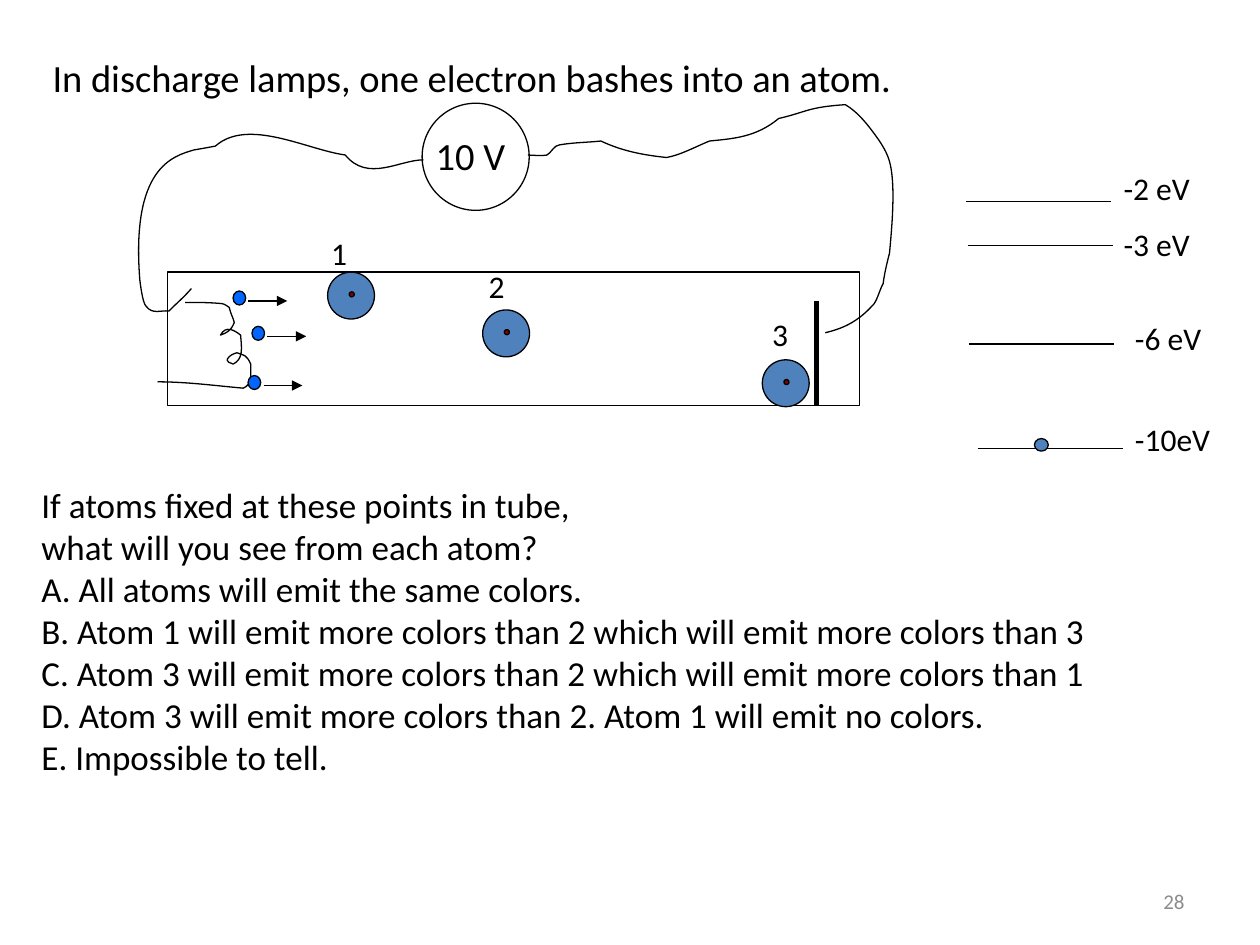
from lxml.etree import SubElement
from pptx import Presentation
from pptx.dml.color import RGBColor
from pptx.enum.shapes import MSO_CONNECTOR, MSO_SHAPE
from pptx.enum.text import MSO_ANCHOR, MSO_AUTO_SIZE, PP_ALIGN
from pptx.oxml.ns import qn
from pptx.util import Pt

HUE = {"ink": "000000", "atom": "4F81BD", "core": "800000",
       "free": "0066FF", "page": "8C8C8C"}
FONT = "Calibri"

QUIZ = [
    "If atoms fixed at these points in tube,",
    "what will you see from each atom?",
    "A. All atoms will emit the same colors.",
    "B. Atom 1 will emit more colors than 2 which will emit more colors than 3",
    "C. Atom 3 will emit more colors than 2 which will emit more colors than 1",
    "D. Atom 3 will emit more colors than 2. Atom 1 will emit no colors.",
    "E. Impossible to tell.",
]

# Each curve: a start point, then two handles and an end point per segment.
COIL = [
    (105.8, 172.8),
    (113, 172.8), (119.5, 172.8), (126.7, 173.5),
    (128.2, 173.5), (131, 175.7), (131, 175.7),
    (131.8, 179.3), (133.2, 181.4), (133.9, 184.3),
    (131.8, 189.4), (129.6, 190.1), (126, 191.5),
    (128.9, 185.8), (133.9, 188.6), (137.5, 191.5),
    (138.2, 199.4), (139, 205.2), (133.2, 208.1),
    (133.2, 207.4), (127.4, 207.4), (131, 203.8),
    (132.5, 202.3), (135.4, 201.6), (135.4, 201.6),
    (139.7, 203), (141.1, 203), (143.3, 208.1),
    (143.3, 215.3), (144, 219.6), (139, 221.8),
    (122.4, 220.3), (106.6, 218.2), (90, 218.2),
]
LEFT_WIRE = [
    (109.4, 164.9),
    (105.1, 169.9), (100.8, 173.5), (96.5, 177.8),
    (92.2, 177.1), (87.1, 180), (83.5, 175),
    (81.4, 173.5), (79.9, 159.8), (79.9, 159.8),
    (74.9, 95.8), (98.6, 89.3), (110.9, 85.7),
    (115.2, 85), (119.5, 84.2), (123.1, 83.5),
    (141.8, 67), (175.7, 85.7), (197.3, 88.6),
    (210.2, 104.4), (228.2, 91.4), (241.9, 91.4),
]
RIGHT_WIRE = [
    (471.6, 190.1),
    (481, 187.9), (489.6, 184.3), (498.2, 175),
    (501.1, 172.8), (502.6, 165.6), (504.7, 162),
    (505.4, 155.5), (508.3, 144.7), (508.3, 144.7),
    (509.8, 128.9), (511.9, 105.1), (508.3, 92.2),
    (506.9, 87.1), (504, 82.8), (502.6, 80.6),
    (496.1, 71.3), (490.3, 64.1), (483.1, 59.8),
    (461.5, 61.2), (460.8, 64.1), (445, 67.7),
    (432, 78.5), (419, 79.2), (405.4, 80.6),
    (396.7, 84.2), (388.8, 88.6), (380.9, 90),
    (367.9, 88.6), (355.7, 86.4), (343.4, 80.6),
    (335.5, 81.4), (327.6, 81.4), (319.7, 82.8),
    (316.8, 82.8), (314.6, 87.8), (312.5, 88.6),
    (308.9, 89.3), (305.3, 88.6), (301.7, 88.6),
]


def tint(name):
    return RGBColor.from_string(HUE[name])


def style(shape, fill=None):
    """Thin black outline, no shadow, and a fill only if one is named."""
    shape.shadow.inherit = False
    shape.line.color.rgb = tint("ink")
    shape.line.width = Pt(0.75)
    if fill:
        shape.fill.solid()
        shape.fill.fore_color.rgb = tint(fill)
    else:
        shape.fill.background()


def add_form(shapes, kind, x, y, w, h, fill=None):
    style(shapes.add_shape(kind, Pt(x), Pt(y), Pt(w), Pt(h)), fill)


def add_curve(shapes, points):
    """Draw the points as a chain of cubic Bezier segments."""
    first, *rest = [(Pt(x), Pt(y)) for x, y in points]
    pen = shapes.build_freeform(*first)
    pen.add_line_segments(rest, close=False)
    shape = pen.convert_to_shape()
    style(shape)
    steps = list(shape.element.iter(qn("a:lnTo")))
    for i in range(0, len(steps), 3):
        bend = SubElement(steps[i].getparent(), qn("a:cubicBezTo"))
        for step in steps[i:i + 3]:
            bend.append(step[0])
            step.getparent().remove(step)


def add_line(shapes, x1, y1, x2, y2, width=0.75, arrow=False):
    line = shapes.add_connector(
        MSO_CONNECTOR.STRAIGHT, Pt(x1), Pt(y1), Pt(x2), Pt(y2))
    line.line.color.rgb = tint("ink")
    line.line.width = Pt(width)
    if arrow:
        SubElement(line.line._get_or_add_ln(), qn("a:tailEnd"), type="triangle")
    SubElement(line.element.spPr, qn("a:effectLst"))


def add_text(shapes, lines, x, y, w, h, size, color="ink", wrap=False):
    frame = shapes.add_textbox(Pt(x), Pt(y), Pt(w), Pt(h)).text_frame
    frame.word_wrap = wrap
    frame.auto_size = MSO_AUTO_SIZE.SHAPE_TO_FIT_TEXT
    frame.text = "\n".join(lines)
    for para in frame.paragraphs:
        for run in para.runs:
            run.font.name = FONT
            run.font.size = Pt(size)
            run.font.color.rgb = tint(color)
    return frame


def add_atom(shapes, x, y):
    group = shapes.add_group_shape().shapes
    add_form(group, MSO_SHAPE.OVAL, x, y, 26.8, 26.8, "atom")
    add_form(group, MSO_SHAPE.OVAL, x + 12.4, y + 11.3, 2.9, 2.9, "core")


def add_free(shapes, x, y):
    """A free electron with its arrow of motion."""
    add_form(shapes, MSO_SHAPE.OVAL, x, y, 7.2, 8, "free")
    add_line(shapes, x + 8.8, y + 5.7, x + 31, y + 5.7, arrow=True)


def add_tube(shapes):
    for curve in (COIL, LEFT_WIRE, RIGHT_WIRE):
        add_curve(shapes, curve)
    add_line(shapes, 466.6, 172, 466.6, 231.8, width=3)
    add_form(shapes, MSO_SHAPE.OVAL, 241.2, 59, 61.2, 61.2)
    add_text(shapes, ["10 V"], 241.9, 72, 59.8, 33.8, 22)
    add_form(shapes, MSO_SHAPE.RECTANGLE, 95.8, 155.5, 395.3, 76.3)
    for x, y in ((133.2, 166.3), (144, 186.5), (141.8, 214.6)):
        add_free(shapes, x, y)
    atoms = [("1", 187.2, 155.5, 182.2, 130.3),
             ("2", 275.8, 177.1, 272.2, 149),
             ("3", 435.6, 205.6, 434.2, 176.4)]
    for name, x, y, tx, ty in atoms:
        add_atom(shapes, x, y)
        add_text(shapes, [name], tx, ty, 28, 36, 18)


def add_levels(shapes):
    levels = [("-2 eV", 552.2, 115.2, 635, 92.9),
              ("-3 eV", 553, 140.4, 635, 125.3),
              ("-6 eV", 553.7, 196.6, 641.5, 178.6),
              ("-10eV", 558.7, 256.3, 641.5, 236.2)]
    for name, x, y, tx, ty in levels:
        add_line(shapes, x, y, x + 82.8, y)
        add_text(shapes, [name], tx, ty, 72, 36, 18)
    add_form(shapes, MSO_SHAPE.OVAL, 591.1, 250.6, 7.9, 7.2, "atom")


def add_quiz(shapes):
    frame = add_text(shapes, QUIZ, 16.6, 272.9, 703.4, 177, 20, wrap=True)
    for para in frame.paragraphs:
        props = para._p.get_or_add_pPr()
        props.set("marL", str(Pt(23)))
        props.set("indent", str(Pt(-23)))


def add_page(shapes):
    frame = add_text(shapes, ["28"], 516.2, 500.4, 167.8, 28.8, 12, "page", True)
    frame.auto_size = MSO_AUTO_SIZE.NONE
    frame.vertical_anchor = MSO_ANCHOR.MIDDLE
    frame.paragraphs[0].alignment = PP_ALIGN.RIGHT


def main():
    deck = Presentation()
    deck.slide_width, deck.slide_height = Pt(720), Pt(540)
    shapes = deck.slides.add_slide(deck.slide_layouts[6]).shapes
    add_text(shapes, ["In discharge lamps, one electron bashes into an atom."],
             23, 27.4, 504, 33.8, 22)
    add_tube(shapes)
    add_levels(shapes)
    add_quiz(shapes)
    add_page(shapes)
    deck.save("out.pptx")


if __name__ == "__main__":
    main()
